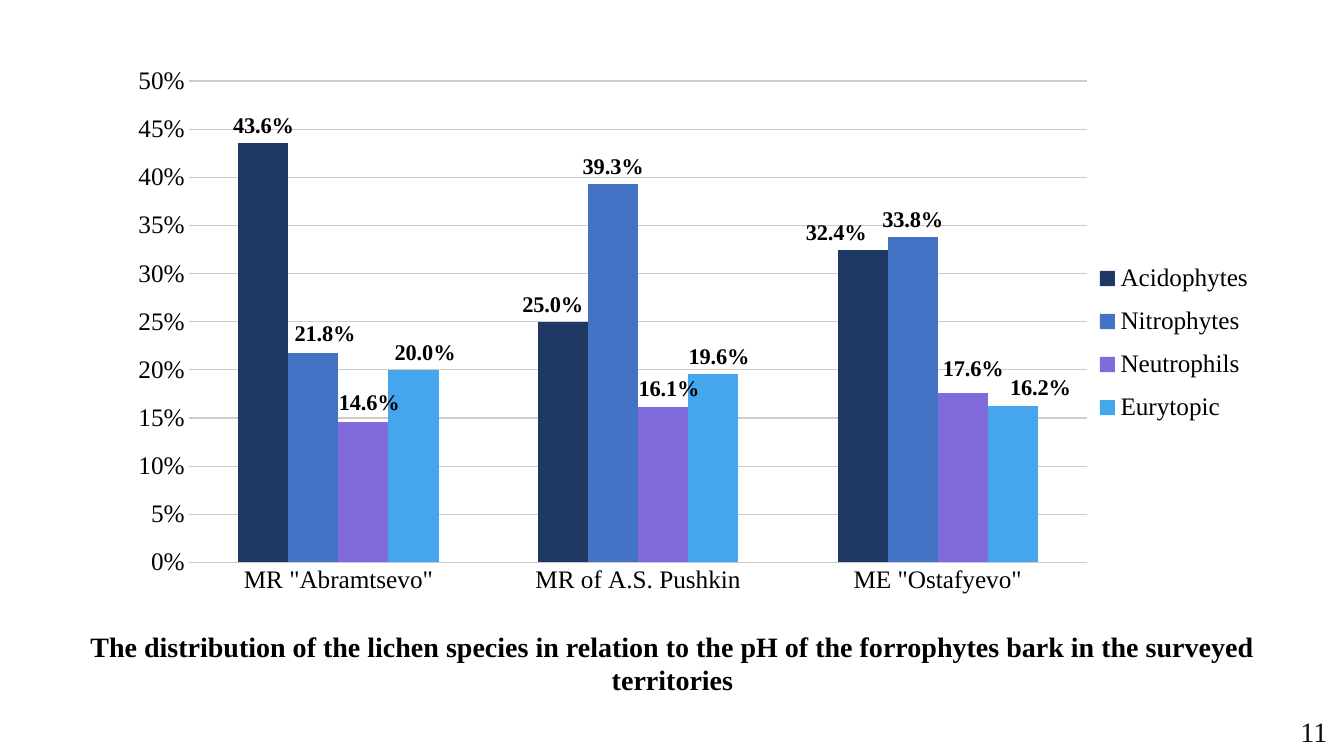
from lxml.etree import SubElement
from pptx import Presentation
from pptx.chart.data import CategoryChartData
from pptx.dml.color import RGBColor
from pptx.enum.chart import XL_CHART_TYPE, XL_LABEL_POSITION, XL_LEGEND_POSITION, XL_TICK_MARK
from pptx.enum.text import MSO_ANCHOR, MSO_AUTO_SIZE, PP_ALIGN
from pptx.oxml import parse_xml
from pptx.oxml.ns import nsdecls, qn
from pptx.util import Inches, Pt

BLACK = RGBColor(0x00, 0x00, 0x00)
NEAR_BLACK = RGBColor(0x0D, 0x0D, 0x0D)
GRID_GREY = RGBColor(0xCC, 0xCC, 0xCC)
NAVY = RGBColor(0x20, 0x38, 0x64)
BLUE = RGBColor(0x44, 0x72, 0xC4)
VIOLET = RGBColor(0x80, 0x6A, 0xDC)
SKY = RGBColor(0x45, 0xA5, 0xED)

TERRITORIES = ['MR "Abramtsevo"', "MR of A.S. Pushkin", 'ME "Ostafyevo"']
LICHEN_GROUPS = [
    ("Acidophytes", NAVY, [0.436, 0.25, 0.324], {1: (-0.009, 0), 2: (-0.023, -0.002)}),
    ("Nitrophytes", BLUE, [0.218, 0.393, 0.338], {0: (0.01, -0.003)}),
    ("Neutrophils", VIOLET, [0.146, 0.161, 0.176],
     {0: (0.005, -0.003), 1: (0.005, -0.003), 2: (0.009, -0.011)}),
    ("Eurytopic", SKY, [0.2, 0.196, 0.162],
     {0: (0.01, 0), 1: (0.005, 0), 2: (0.024, -0.003)}),
]


def style_font(font, size, color=BLACK, bold=False):
    font.name = "Times New Roman"
    font.size = Pt(size)
    font.bold = bold
    font.color.rgb = color


def manual_layout(**settings):
    layout = parse_xml(f"<c:layout {nsdecls('c')}/>")
    manual = SubElement(layout, qn("c:manualLayout"))
    for tag, value in settings.items():
        SubElement(manual, qn(f"c:{tag}")).set("val", str(value))
    return layout


prs = Presentation()
prs.slide_width = Inches(13.33)
prs.slide_height = Inches(7.5)
slide = prs.slides.add_slide(prs.slide_layouts[5])

page_number = slide.shapes.add_textbox(Inches(12.8), Inches(7.11), Inches(0.53), Inches(0.3))
page_number.text_frame.word_wrap = True
page_number.text_frame.vertical_anchor = MSO_ANCHOR.MIDDLE
page_number.text_frame.text = "11"
style_font(page_number.text_frame.paragraphs[0].runs[0].font, 20, NEAR_BLACK)

caption = slide.shapes.title
caption.left, caption.top = Inches(0.39), Inches(6.19)
caption.width, caption.height = Inches(12.56), Inches(0.77)
caption_frame = caption.text_frame
caption_frame.text = (
    "The distribution of the lichen species in relation to the pH of the "
    "forrophytes bark in the surveyed territories"
)
caption_frame.word_wrap = True
caption_frame.auto_size = MSO_AUTO_SIZE.SHAPE_TO_FIT_TEXT
caption_frame.vertical_anchor = MSO_ANCHOR.TOP
caption_frame.paragraphs[0].alignment = PP_ALIGN.CENTER
caption_frame.paragraphs[0].line_spacing = 1.0
style_font(caption_frame.paragraphs[0].runs[0].font, 20, bold=True)

shares = CategoryChartData(number_format="0.0%")
shares.categories = TERRITORIES
for name, color, values, offsets in LICHEN_GROUPS:
    shares.add_series(name, values)
chart = slide.shapes.add_chart(
    XL_CHART_TYPE.COLUMN_CLUSTERED,
    Inches(1.06), Inches(0.35), Inches(11.43), Inches(6.22), shares,
).chart
chart.has_title = False
chart.font.name = "Calibri"
chart.font.size = Pt(10)
chart.font.color.rgb = BLACK

plot = chart.plots[0]
plot.gap_width = 199
plot.overlap = 0
plot.vary_by_categories = False
plot_area = chart._chartSpace.chart.plotArea
for default_layout in plot_area.findall(qn("c:layout")):
    plot_area.remove(default_layout)
plot_area.insert(0, manual_layout(
    layoutTarget="inner", xMode="edge", yMode="edge", x=0.071, y=0.073, w=0.78, h=0.768))

for series, (name, color, values, offsets) in zip(plot.series, LICHEN_GROUPS):
    series.format.fill.solid()
    series.format.fill.fore_color.rgb = color
    series.invert_if_negative = False
    labels = series.data_labels
    labels.show_value = True
    labels.position = XL_LABEL_POSITION.OUTSIDE_END
    labels.number_format = "0.0%"
    labels.number_format_is_linked = False
    style_font(labels.font, 16, bold=True)
    for index, (dx, dy) in offsets.items():
        share_label = series.points[index].data_label
        share_label.position = XL_LABEL_POSITION.OUTSIDE_END
        style_font(share_label.font, 16, bold=True)
        idx = labels._element.xpath(f'c:dLbl/c:idx[@val="{index}"]')[0]
        idx.addnext(manual_layout(x=dx, y=dy))

for axis in (chart.category_axis, chart.value_axis):
    axis.major_tick_mark = XL_TICK_MARK.NONE
    axis.minor_tick_mark = XL_TICK_MARK.NONE
    axis.format.line.fill.background()
    style_font(axis.tick_labels.font, 18)

share_axis = chart.value_axis
share_axis.minimum_scale = 0
share_axis.maximum_scale = 0.5
share_axis.major_unit = 0.05
share_axis.tick_labels.number_format = "0%"
share_axis.tick_labels.number_format_is_linked = False
share_axis.major_gridlines.format.line.color.rgb = GRID_GREY
share_axis.major_gridlines.format.line.width = Pt(0.75)

chart.has_legend = True
legend = chart.legend
legend.position = XL_LEGEND_POSITION.RIGHT
legend.include_in_layout = False
style_font(legend.font, 18)
for default_layout in legend._element.findall(qn("c:layout")):
    legend._element.remove(default_layout)
legend._element.find(qn("c:legendPos")).addnext(manual_layout(
    xMode="edge", yMode="edge", x=0.856, y=0.341, w=0.14, h=0.3))

prs.save("out.pptx")
